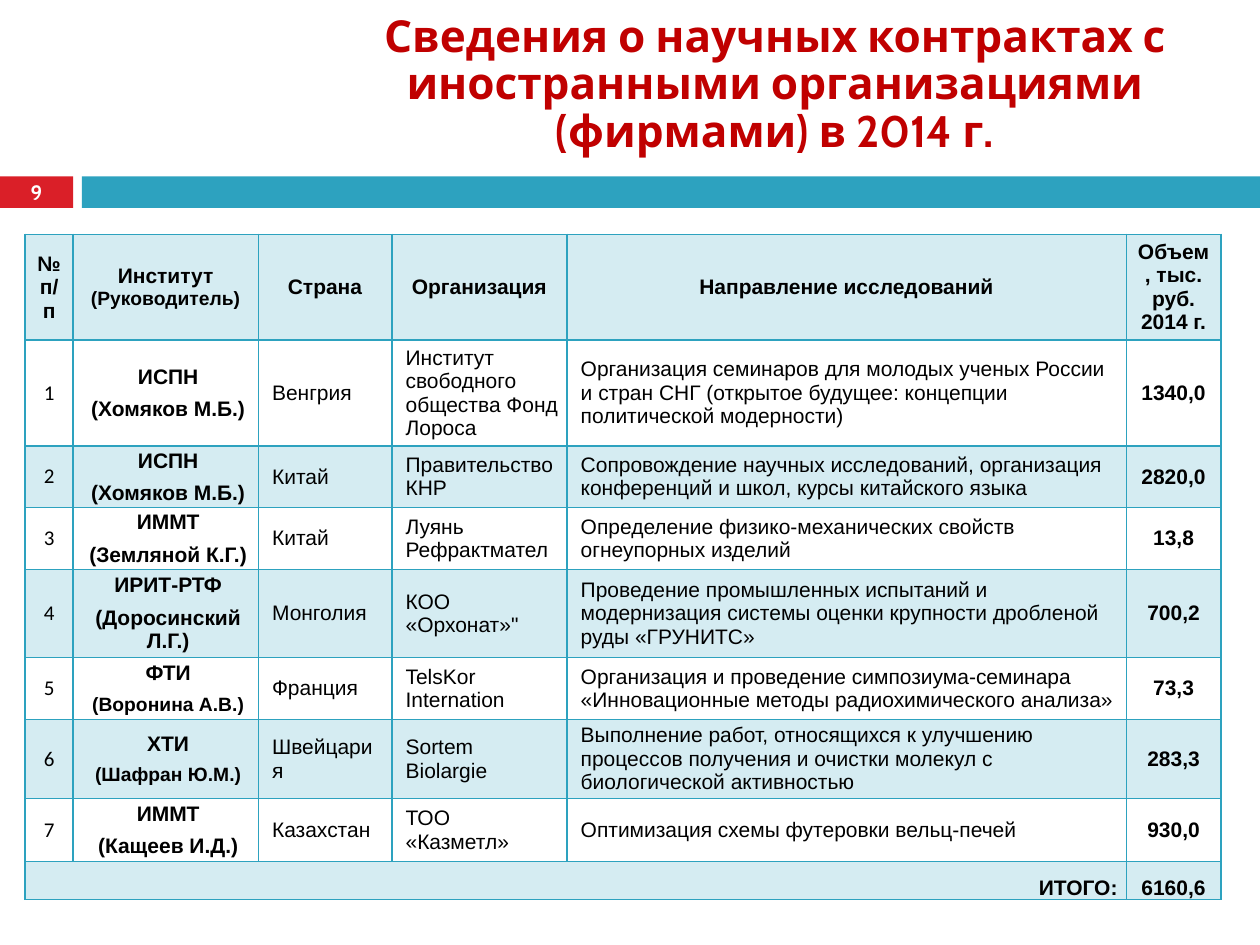
from dataclasses import dataclass

import pptx
import pptx.util
import pptx.dml.color
import pptx.enum.shapes
import pptx.enum.text
import pptx.oxml
import pptx.oxml.ns
from pptx.util import Inches

ALIGN = pptx.enum.text.PP_ALIGN
ANCHOR = pptx.enum.text.MSO_ANCHOR
COLORS = {"teal": "2DA2BF", "red": "DA1F28", "title": "C00000", "text": "000000", "white": "FFFFFF"}
TINT_ALPHA = 20
COLS = [0.38, 1.47, 1.06, 1.39, 4.44, 0.75]
ROWS = [0.84, 0.84, 0.49, 0.49, 0.7, 0.49, 0.63, 0.5, 0.3]
HEADERS = [
    "№ п/п", "Институт\n(Руководитель)", "Страна", "Организация",
    "Направление исследований", "Объем, тыс. руб. 2014 г.",
]


@dataclass
class Contract:
    institute: str
    head: str
    country: str
    partner: str
    topic: str
    amount: str
    head_size: float = 12


@dataclass
class Bar:
    left: float
    width: float
    color: str


BARS = [Bar(0, 0.58, "red"), Bar(0.65, 9.35, "teal")]
CONTRACTS = [
    Contract("ИСПН", "(Хомяков М.Б.)", "Венгрия", "Институт свободного общества Фонд Лороса",
             "Организация семинаров для молодых ученых России и стран СНГ "
             "(открытое будущее: концепции политической модерности)", "1340,0"),
    Contract("ИСПН", "(Хомяков М.Б.)", "Китай", "Правительство КНР",
             "Сопровождение научных исследований, организация конференций и школ, "
             "курсы китайского языка", "2820,0"),
    Contract("ИММТ", "(Земляной К.Г.)", "Китай", "Луянь Рефрактмател",
             "Определение физико-механических свойств огнеупорных изделий", "13,8"),
    Contract("ИРИТ-РТФ", "(Доросинский Л.Г.)", "Монголия", "КОО «Орхонат»\"",
             "Проведение промышленных испытаний и модернизация системы оценки "
             "крупности дробленой руды «ГРУНИТС»", "700,2"),
    Contract("ФТИ", "(Воронина А.В.)", "Франция", "TelsKor Internation",
             "Организация и проведение симпозиума-семинара "
             "«Инновационные методы радиохимического анализа»", "73,3", 11),
    Contract("ХТИ", "(Шафран Ю.М.)", "Швейцария", "Sortem Biolargie",
             "Выполнение работ, относящихся к улучшению процессов получения и очистки "
             "молекул с биологической активностью", "283,3", 11),
    Contract("ИММТ", "(Кащеев И.Д.)", "Казахстан", "ТОО «Казметл»",
             "Оптимизация схемы футеровки вельц-печей", "930,0"),
]


def rgb(name: str) -> pptx.dml.color.RGBColor:
    return pptx.dml.color.RGBColor.from_string(COLORS[name])


def write(tf, text: str, *, size: float = 12, last_size: float = 0, font: str = "Arial",
          color: str = "text", bold: bool = True, align=ALIGN.CENTER,
          indent: float = 0, before: float = 0, after: float = 0, spacing: float = 1) -> None:
    for i, line in enumerate(text.split("\n")):
        p = tf.add_paragraph() if i else tf.paragraphs[0]
        p.alignment = align
        p.line_spacing = spacing
        p.space_before = pptx.util.Pt(before if i else 0)
        p.space_after = pptx.util.Pt(after)
        if indent:
            pPr = p._p.get_or_add_pPr()
            pPr.set("marL", str(Inches(indent)))
            pPr.set("indent", "0")
        r = p.add_run()
        r.text = line
        r.font.name = font
        r.font.size = pptx.util.Pt(last_size if i and last_size else size)
        r.font.bold = bold
        r.font.color.rgb = rgb(color)


def add_bar(s, bar: Bar) -> None:
    sp = s.shapes.add_shape(pptx.enum.shapes.MSO_SHAPE.RECTANGLE, Inches(bar.left),
                            Inches(1.4), Inches(bar.width), Inches(0.25))
    sp.shadow.inherit = False
    sp.fill.solid()
    sp.fill.fore_color.rgb = rgb(bar.color)
    sp.line.fill.background()


def add_text(s, left: float, top: float, width: float, height: float, text: str, **fmt) -> None:
    tf = s.shapes.add_textbox(Inches(left), Inches(top), Inches(width), Inches(height)).text_frame
    tf.word_wrap = True
    tf.vertical_anchor = ANCHOR.MIDDLE
    write(tf, text, **fmt)


def style_cell(cell, tinted: bool, anchor) -> None:
    cell.margin_left = cell.margin_right = Inches(0.07)
    cell.margin_top = cell.margin_bottom = 0
    cell.vertical_anchor = anchor
    tcPr = cell._tc.get_or_add_tcPr()
    for side in ("lnL", "lnR", "lnT", "lnB"):
        tcPr.append(pptx.oxml.parse_xml(
            f'<a:{side} {pptx.oxml.ns.nsdecls("a")} w="{pptx.util.Pt(1)}"><a:solidFill>'
            f'<a:srgbClr val="{COLORS["teal"]}"/></a:solidFill></a:{side}>'))
    if not tinted:
        cell.fill.background()
        return
    cell.fill.solid()
    cell.fill.fore_color.rgb = rgb("teal")
    clr = tcPr.find(pptx.oxml.ns.qn("a:solidFill")).find(pptx.oxml.ns.qn("a:srgbClr"))
    clr.append(pptx.oxml.parse_xml(
        f'<a:alpha {pptx.oxml.ns.nsdecls("a")} val="{TINT_ALPHA * 1000}"/>'))


def fill_contract(cells: list, number: int, c: Contract) -> None:
    write(cells[0].text_frame, str(number), font="Calibri", bold=False)
    write(cells[1].text_frame, f"{c.institute}\n{c.head}", last_size=c.head_size,
          indent=0.04, before=3, after=2)
    for cell, text in zip(cells[2:5], (c.country, c.partner, c.topic)):
        write(cell.text_frame, text, bold=False, align=ALIGN.LEFT, indent=0.04, after=2)
    write(cells[5].text_frame, c.amount, after=2)


def add_contract_table(s) -> None:
    table = s.shapes.add_table(len(ROWS), len(COLS), Inches(0.2), Inches(1.86),
                               Inches(sum(COLS)), Inches(sum(ROWS))).table
    table.first_row = table.horz_banding = False
    for col, width in zip(table.columns, COLS):
        col.width = Inches(width)
    last = len(ROWS) - 1
    for i, height in enumerate(ROWS):
        table.rows[i].height = Inches(height)
        for cell in table.rows[i].cells:
            style_cell(cell, i % 2 == 0, ANCHOR.BOTTOM if i == last else ANCHOR.MIDDLE)
    for cell, text in zip(table.rows[0].cells, HEADERS):
        write(cell.text_frame, text, last_size=11)
    for i, contract in enumerate(CONTRACTS, 1):
        fill_contract(list(table.rows[i].cells), i, contract)
    table.cell(last, 0).merge(table.cell(last, 4))
    write(table.cell(last, 0).text_frame, "ИТОГО:", align=ALIGN.RIGHT)
    write(table.cell(last, 5).text_frame, "6160,6")


def main() -> None:
    prs = pptx.Presentation()
    prs.slide_width, prs.slide_height = Inches(10), Inches(7.5)
    s = prs.slides.add_slide(prs.slide_layouts[6])
    for bar in BARS:
        add_bar(s, bar)
    add_text(s, 2.33, 0.13, 7.64, 1.1,
             "Сведения о научных контрактах с иностранными организациями (фирмами) в 2014 г.",
             size=25.2, font="Cabin", color="title", spacing=0.9)
    add_text(s, 0, 1.39, 0.58, 0.27, "9", size=11.9, font="Cabin", color="white")
    add_contract_table(s)
    prs.save("out.pptx")


if __name__ == "__main__":
    main()
